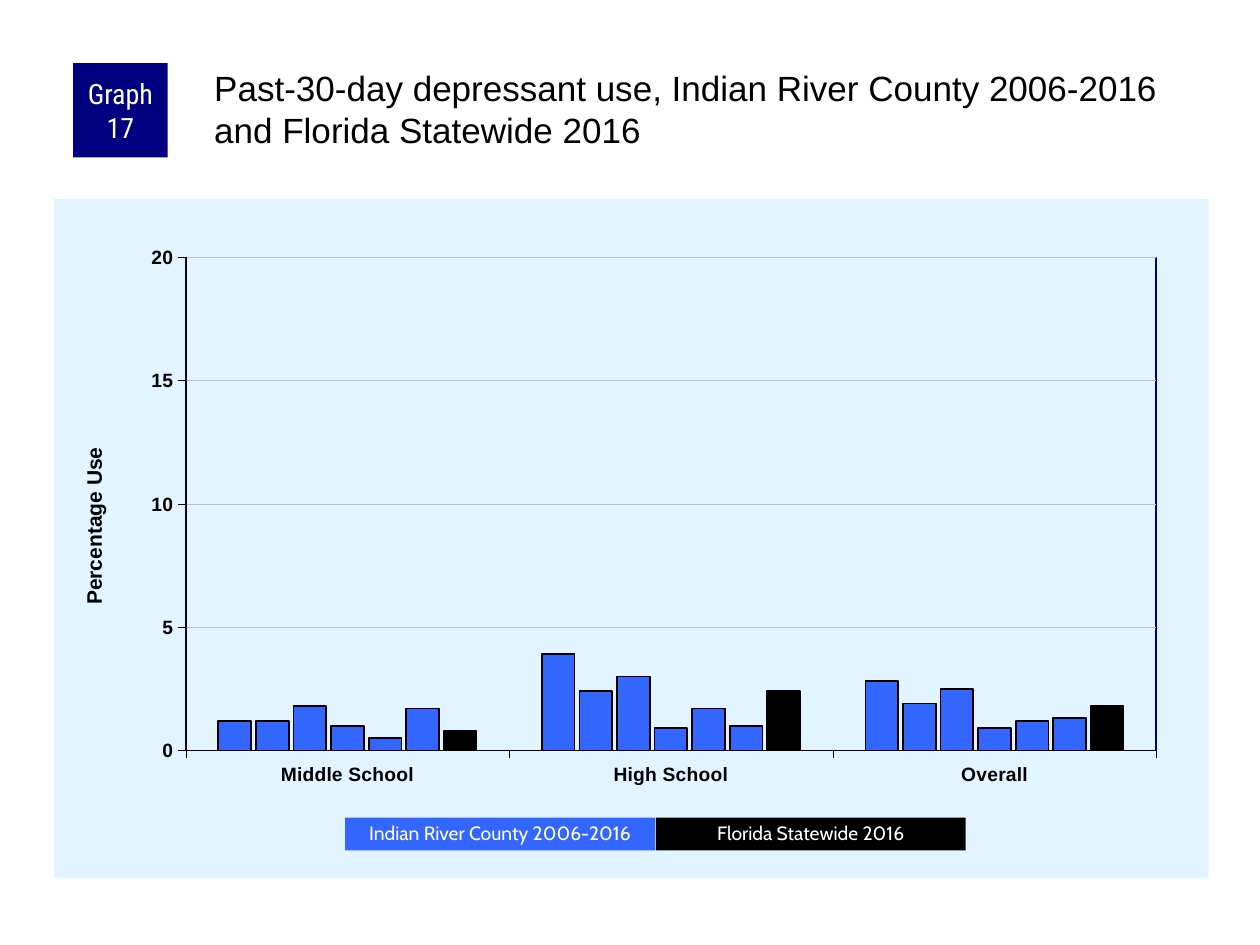
"""Build the depressant use slide with its column chart and colour key."""
from dataclasses import dataclass

from lxml import etree
from pptx import Presentation
from pptx import util as u
from pptx.chart.data import CategoryChartData
from pptx.dml.color import RGBColor
from pptx.enum import chart as charts, shapes, text
from pptx.oxml import parse_xml
from pptx.oxml.ns import nsdecls, qn

BLACK, WHITE, NAVY, BLUE, PALE, GREY = "000000", "FFFFFF", "000080", "3366FF", "E1F4FF", "C0C0C0"
CATEGORIES = ("Middle School", "High School", "Overall")
SERIES = (
    (1.2, 3.9, 2.8),
    (1.2, 2.4, 1.9),
    (1.8, 3, 2.5),
    (1, 0.9, 0.9),
    (0.5, 1.7, 1.2),
    (1.7, 1, 1.3),
    (0.8, 2.4, 1.8),
)


@dataclass
class Label:
    """A filled rectangle with centred text."""
    words: str
    left: float
    top: float
    width: float
    height: float
    fill: str
    font: str
    size: float
    spacing: float = 1.0
    margins: tuple = (0.1, 0.05, 0.1, 0.05)


LABELS = [Label("Graph 17", 0.58, 0.5, 0.75, 0.75, NAVY, "Roboto Condensed", 16,
                margins=(0.05, 0, 0.05, 0))]
LABELS += [
    Label(words, 2.74 + index * 2.465, 6.49, 2.46, 0.26, fill, "Cabin", 11, 0.9)
    for index, (words, fill) in enumerate(
        (("Indian River County 2006-2016", BLUE), ("Florida Statewide 2016", BLACK)))
]


def rgb(value: str) -> RGBColor:
    """Turn a hex string into a colour."""
    return RGBColor.from_string(value)


def format_font(font, name="Arial", size=11, color=BLACK, bold=False) -> None:
    """Set the face, size, colour and weight of a font."""
    font.name, font.size, font.bold = name, u.Pt(size), bold
    font.color.rgb = rgb(color)


def format_line(line, color: str, width: float) -> None:
    """Set the colour and width of a line."""
    line.color.rgb = rgb(color)
    line.width = u.Pt(width)


def place(shape, left: float, top: float, width: float, height: float) -> None:
    """Move and size a shape in inches."""
    shape.left, shape.top = u.Inches(left), u.Inches(top)
    shape.width, shape.height = u.Inches(width), u.Inches(height)


def write(frame, words: str, *, align=text.PP_ALIGN.LEFT, anchor=text.MSO_ANCHOR.TOP,
          margins=(0, 0, 0, 0), spacing=1.0, **font) -> None:
    """Put one formatted paragraph into a text frame."""
    frame.word_wrap = True
    frame.auto_size = text.MSO_AUTO_SIZE.NONE
    frame.vertical_anchor = anchor
    frame.margin_left, frame.margin_top, frame.margin_right, frame.margin_bottom = map(
        u.Inches, margins)
    paragraph = frame.paragraphs[0]
    paragraph.alignment, paragraph.line_spacing = align, spacing
    paragraph.space_before = u.Pt(0)
    run = paragraph.add_run()
    run.text = words
    format_font(run.font, **font)


def draw_label(slide, label: Label) -> None:
    """Draw one filled label."""
    shape = slide.shapes.add_shape(
        shapes.MSO_SHAPE.RECTANGLE, *map(u.Inches, (label.left, label.top, label.width, label.height)))
    shape.shadow.inherit = False
    shape.fill.solid()
    shape.fill.fore_color.rgb = rgb(label.fill)
    shape.line.fill.background()
    write(shape.text_frame, label.words, align=text.PP_ALIGN.CENTER,
          anchor=text.MSO_ANCHOR.MIDDLE, margins=label.margins, spacing=label.spacing,
          name=label.font, size=label.size, color=WHITE)


def set_layout(parent, index: int, **values) -> None:
    """Give a chart part a manual layout."""
    for layout in parent.findall(qn("c:layout")):
        parent.remove(layout)
    layout = parse_xml(f"<c:layout {nsdecls('c')}><c:manualLayout/></c:layout>")
    for tag, value in values.items():
        etree.SubElement(layout[0], qn(f"c:{tag}")).set("val", str(value))
    parent.insert(index, layout)


def area_format(fill: str, line: str):
    """Make the fill and line properties of a chart area."""
    return parse_xml(f"<c:spPr {nsdecls('c', 'a')}>{fill}{line}</c:spPr>")


def format_axis(axis) -> None:
    """Set the line, ticks and labels that both axes share."""
    format_line(axis.format.line, BLACK, 0.25)
    format_font(axis.tick_labels.font, bold=True)
    axis.major_tick_mark = charts.XL_TICK_MARK.OUTSIDE
    axis.minor_tick_mark = charts.XL_TICK_MARK.NONE


def draw_chart(slide) -> None:
    """Draw the clustered column chart."""
    data = CategoryChartData()
    data.categories = CATEGORIES
    for number, values in enumerate(SERIES, 1):
        data.add_series(f"Series {number}", values)
    chart = slide.shapes.add_chart(
        charts.XL_CHART_TYPE.COLUMN_CLUSTERED, *map(u.Inches, (0.43, 1.58, 9.16, 5.39)), data).chart
    chart.has_legend = chart.has_title = False
    format_font(chart.font, size=8)

    plot = chart.plots[0]
    plot.gap_width, plot.overlap, plot.vary_by_categories = 200, -15, False
    for index, series in enumerate(plot.series):
        series.format.fill.solid()
        series.format.fill.fore_color.rgb = rgb(BLACK if index == len(SERIES) - 1 else BLUE)
        format_line(series.format.line, BLACK, 1)

    axis = chart.value_axis
    format_axis(chart.category_axis)
    format_axis(axis)
    axis.minimum_scale, axis.maximum_scale, axis.major_unit = 0, 20, 5
    axis.has_major_gridlines = True
    format_line(axis.major_gridlines.format.line, GREY, 0.25)
    title = axis.axis_title
    run = title.text_frame.paragraphs[0].add_run()
    run.text = "Percentage Use"
    format_font(run.font, size=12, bold=True)
    set_layout(title._element, 1, xMode="edge", yMode="edge", x=0.02, y=0.36)

    space = chart._chartSpace
    area = space.chart.plotArea
    set_layout(area, 0, layoutTarget="inner", xMode="edge", yMode="edge",
               x=0.114, y=0.086, w=0.841, h=0.726)
    area.append(area_format(
        "<a:noFill/>", f'<a:ln w="{u.Pt(1)}"><a:solidFill><a:srgbClr val="{NAVY}"/></a:solidFill></a:ln>'))
    space.chart.addnext(area_format(
        f'<a:solidFill><a:srgbClr val="{PALE}"/></a:solidFill>', "<a:ln><a:noFill/></a:ln>"))


def main() -> None:
    """Build and save the presentation."""
    presentation = Presentation()
    presentation.slide_width, presentation.slide_height = u.Inches(10), u.Inches(7.5)
    slide = presentation.slides.add_slide(presentation.slide_layouts[5])
    place(slide.shapes.title, 1.67, 0.5, 7.92, 0.83)
    write(slide.shapes.title.text_frame,
          "Past-30-day depressant use, Indian River County 2006-2016 and Florida Statewide 2016",
          margins=(0.03, 0.03, 0, 0), size=20)
    draw_chart(slide)
    for label in LABELS:
        draw_label(slide, label)
    presentation.save("out.pptx")


if __name__ == "__main__":
    main()
